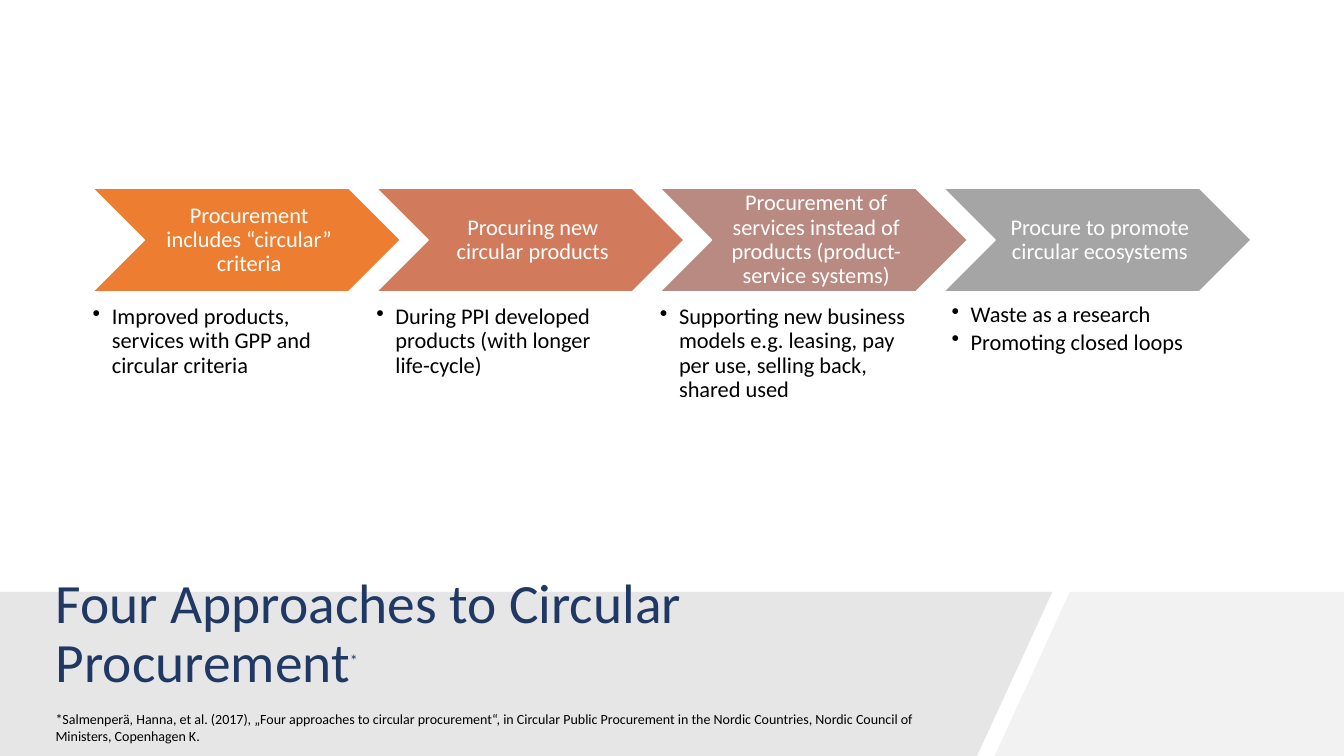
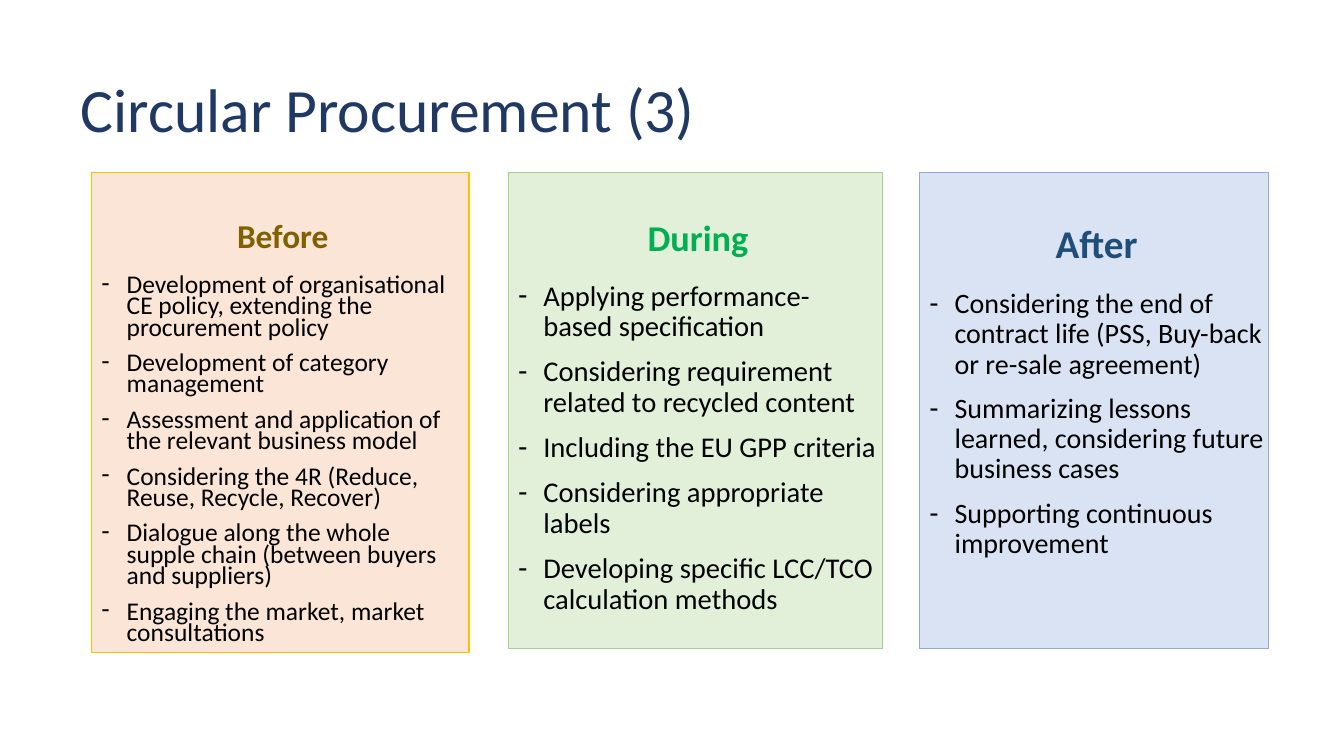
import pptx
import pptx.dml.color
import pptx.enum.shapes
import pptx.enum.text
import pptx.oxml.ns
import pptx.util
from lxml import etree

RGBColor = pptx.dml.color.RGBColor
Inches = pptx.util.Inches
Pt = pptx.util.Pt
ALIGN = pptx.enum.text.PP_ALIGN
ANCHOR = pptx.enum.text.MSO_ANCHOR

WIDTH, HEIGHT = Inches(13.33), Inches(7.5)
FONT = "Calibri"
NAVY = RGBColor(0x20, 0x38, 0x64)
BLACK = RGBColor(0x00, 0x00, 0x00)
WHITE = RGBColor(0xFF, 0xFF, 0xFF)
BAND_DARK = RGBColor(0xE7, 0xE6, 0xE6)
BAND_LIGHT = RGBColor(0xF2, 0xF2, 0xF2)
ORANGE = RGBColor(0xED, 0x7D, 0x31)
TERRACOTTA = RGBColor(0xD1, 0x7B, 0x5C)
ROSE = RGBColor(0xB9, 0x8A, 0x82)
GRAY = RGBColor(0xA5, 0xA5, 0xA5)
PEACH = RGBColor(0xFB, 0xE5, 0xD6)
GOLD = RGBColor(0xFF, 0xC0, 0x00)
BROWN = RGBColor(0x80, 0x60, 0x00)
PALE_GREEN = RGBColor(0xE2, 0xF0, 0xD9)
LEAF = RGBColor(0xA9, 0xD1, 0x8E)
GREEN = RGBColor(0x00, 0xB0, 0x50)
PALE_BLUE = RGBColor(0xDA, 0xE3, 0xF3)
SKY = RGBColor(0x8F, 0xAA, 0xDC)
BLUE = RGBColor(0x1F, 0x4E, 0x79)


def box(left, top, width, height):
    """Turn percentages of the slide's size into left, top, width, height."""
    return (int(WIDTH * left / 100), int(HEIGHT * top / 100),
            int(WIDTH * width / 100), int(HEIGHT * height / 100))


def write(frame, text, size, color, align=ALIGN.LEFT, bold=False, bullet=None,
          indent=0, spacing=0.9, before=0, after=0):
    """Fill the frame's empty first paragraph, or add one, and format it."""
    paragraph = frame.paragraphs[0]
    if paragraph.text:
        paragraph = frame.add_paragraph()
    paragraph.text = text
    paragraph.alignment = align
    paragraph.line_spacing = spacing
    paragraph.space_before, paragraph.space_after = Pt(before), Pt(after)
    properties = paragraph._p.get_or_add_pPr()
    properties.set("marL", str(Inches(indent)))
    properties.set("indent", str(-Inches(indent)))
    tag = "a:buChar" if bullet else "a:buNone"
    mark = etree.SubElement(properties, pptx.oxml.ns.qn(tag))
    if bullet:
        mark.set("char", bullet)
    font = paragraph.font
    font.name, font.size, font.bold = FONT, Pt(size), bold
    font.color.rgb = color


presentation = pptx.Presentation()
presentation.slide_width, presentation.slide_height = WIDTH, HEIGHT
layouts = presentation.slide_layouts
approaches_slide = presentation.slides.add_slide(layouts.get_by_name("Title Only"))
phases_slide = presentation.slides.add_slide(layouts.get_by_name("Comparison"))

# Titles
for slide, text, size, place in (
    (approaches_slide, "Four Approaches to Circular Procurement", 39.6,
     (3.4, 76, 69, 16)),
    (phases_slide, "Circular Procurement (3)", 44, (5.25, 5.2, 86.3, 19.33)),
):
    title = slide.shapes.title
    title.left, title.top, title.width, title.height = box(*place)
    title.text_frame.auto_size = pptx.enum.text.MSO_AUTO_SIZE.NONE
    title.text_frame.vertical_anchor = ANCHOR.MIDDLE
    write(title.text_frame, text, size, NAVY)

asterisk = approaches_slide.shapes.title.text_frame.paragraphs[0].add_run()
asterisk.text = "*"
asterisk.font.size = Pt(19.8)
asterisk.font._element.set("baseline", "60000")

# Slide 1: slanted bands behind the title
shapes = approaches_slide.shapes
for color, corners in (
    (BAND_DARK, ((0, 78.3), (78.3, 78.3), (72.7, 100), (0, 100))),
    (BAND_LIGHT, ((79.6, 78.3), (100, 78.3), (100, 100), (74, 100))),
):
    points = [box(x, y, 0, 0)[:2] for x, y in corners]
    builder = shapes.build_freeform(*points[0])
    builder.add_line_segments(points[1:])
    band = builder.convert_to_shape()
    band.shadow.inherit = False
    band.fill.solid()
    band.fill.fore_color.rgb = color
    band.line.fill.background()
    shapes.element.insert(2, band._element)

# Slide 1: chevrons, each with its list; the last list is set slightly off
APPROACHES = (
    (ORANGE, "Procurement includes “circular” criteria",
     ("Improved products, services with GPP and circular criteria",), 0, 0),
    (TERRACOTTA, "Procuring new circular products",
     ("During PPI developed products (with longer life-cycle)",), 0, 0),
    (ROSE, "Procurement of services instead of products (product-service systems)",
     ("Supporting new business models e.g. leasing, pay per use, selling back, "
      "shared used",), 0, 0),
    (GRAY, "Procure to promote circular ecosystems",
     ("Waste as a research", "Promoting closed loops"), 0.6, -0.3),
)
for column, (color, label, items, shift_x, shift_y) in enumerate(APPROACHES):
    left = 6.9 + 21.1 * column
    chevron = shapes.add_shape(pptx.enum.shapes.MSO_SHAPE.CHEVRON,
                               *box(left, 24.9, 22.9, 13.7))
    chevron.shadow.inherit = False
    chevron.fill.solid()
    chevron.fill.fore_color.rgb = color
    chevron.line.color.rgb = WHITE
    chevron.line.width = Pt(1)
    frame = chevron.text_frame
    frame.vertical_anchor = ANCHOR.MIDDLE
    frame.margin_left = Inches(0.07)
    frame.margin_right = frame.margin_top = frame.margin_bottom = Inches(0.02)
    write(frame, label, 16, WHITE, ALIGN.CENTER)

    frame = shapes.add_textbox(
        *box(left + shift_x, 40.4 + shift_y, 18.3, 13)).text_frame
    frame.word_wrap = True
    frame.margin_left = frame.margin_right = 0
    frame.margin_top = frame.margin_bottom = 0
    for item in items:
        write(frame, item, 16, BLACK, bullet="•", indent=0.19, after=2.4)

footnote = shapes.add_textbox(*box(3.4, 93.3, 68.8, 5.8)).text_frame
footnote.word_wrap = True
write(footnote, "*Salmenperä, Hanna, et al. (2017), „Four approaches to circular "
      "procurement“, in Circular Public Procurement in the Nordic Countries, "
      "Nordic Council of Ministers, Copenhagen K.", 10, BLACK, spacing=1)

# Slide 2: one panel per phase
PHASES = (
    ("Before", (6.8, 22.8, 28.1, 63.5), PEACH, GOLD, BROWN, 23.8, 18.2, 0.7, 0.53, (
        "Development of organisational CE policy, extending the procurement policy",
        "Development of category management",
        "Assessment and application of the relevant business model",
        "Considering the 4R (Reduce, Reuse, Recycle, Recover)",
        "Dialogue along the whole supple chain (between buyers and suppliers)",
        "Engaging the market, market consultations")),
    ("During", (37.8, 22.8, 27.9, 63), PALE_GREEN, LEAF, GREEN, 25.9, 20.4, 0.9, 0.47, (
        "Applying performance-based specification",
        "Considering requirement related to recycled content",
        "Including the EU GPP criteria",
        "Considering appropriate labels",
        "Developing specific LCC/TCO calculation methods")),
    ("After", (68.4, 22.8, 26, 63), PALE_BLUE, SKY, BLUE, 28, 20, 0.9, 0.52, (
        "Considering the end of contract life (PSS, Buy-back or re-sale agreement)",
        "Summarizing lessons learned, considering future business cases",
        "Supporting continuous improvement")),
)
*panels, spare = list(phases_slide.placeholders)[1:]
spare._element.getparent().remove(spare._element)
for panel, phase in zip(panels, PHASES):
    heading, place, fill, outline, color, heading_size, size, spacing, top, items = phase
    panel.left, panel.top, panel.width, panel.height = box(*place)
    panel.fill.solid()
    panel.fill.fore_color.rgb = fill
    panel.line.color.rgb = outline
    panel.line.width = Pt(0.75)
    frame = panel.text_frame
    frame.auto_size = pptx.enum.text.MSO_AUTO_SIZE.NONE
    frame.vertical_anchor = ANCHOR.TOP
    frame.margin_top = Inches(top)
    frame.margin_right = Inches(0.05)
    write(frame, heading, heading_size, color, ALIGN.CENTER, bold=True,
          spacing=spacing, after=6)
    for item in items:
        write(frame, item, size, BLACK, bullet="-", indent=0.25,
              spacing=spacing, before=10)

presentation.save("out.pptx")
